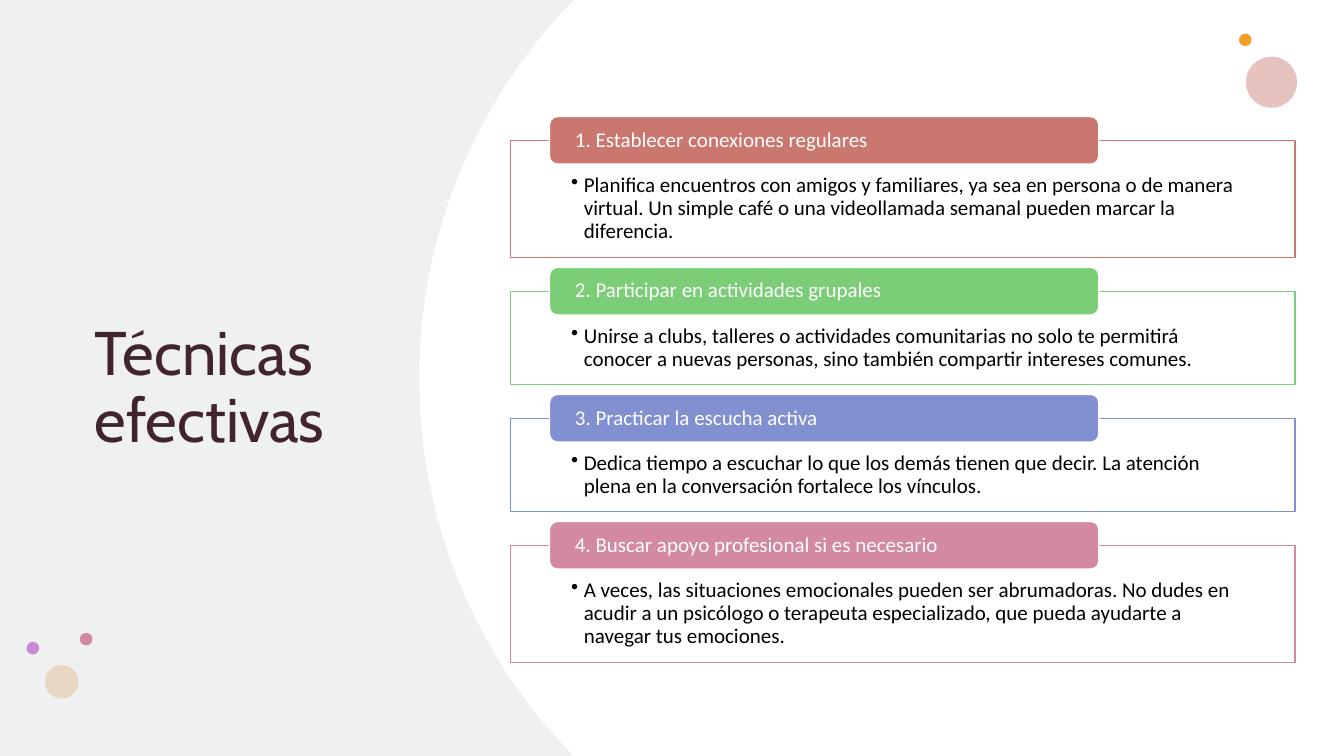
from lxml import etree
from pptx import Presentation
from pptx.dml.color import RGBColor
from pptx.enum.shapes import MSO_SHAPE
from pptx.enum.text import MSO_ANCHOR, PP_ALIGN
from pptx.oxml.ns import qn
from pptx.util import Pt

RECTANGLE, ROUNDED, OVAL = MSO_SHAPE.RECTANGLE, MSO_SHAPE.ROUNDED_RECTANGLE, MSO_SHAPE.OVAL
TOP, MIDDLE, LEFT = MSO_ANCHOR.TOP, MSO_ANCHOR.MIDDLE, PP_ALIGN.LEFT

PAGE_WIDTH, PAGE_HEIGHT = 960, 540
WHITE, BLACK, PLUM, PALE_GREY = "FFFFFF", "000000", "412430", "EFF0F2"

# Colour, frame height, heading, advice
TECHNIQUES = [
    ("CA776F", 83.75, "1. Establecer conexiones regulares",
     "Planifica encuentros con amigos y familiares, ya sea en persona o de manera virtual. "
     "Un simple café o una videollamada semanal pueden marcar la diferencia."),
    ("7CCD78", 66.75, "2. Participar en actividades grupales",
     "Unirse a clubs, talleres o actividades comunitarias no solo te permitirá conocer a "
     "nuevas personas, sino también compartir intereses comunes."),
    ("8090D0", 66.75, "3. Practicar la escucha activa",
     "Dedica tiempo a escuchar lo que los demás tienen que decir. "
     "La atención plena en la conversación fortalece los vínculos."),
    ("D389A2", 83.75, "4. Buscar apoyo profesional si es necesario",
     "A veces, las situaciones emocionales pueden ser abrumadoras. No dudes en acudir a un "
     "psicólogo o terapeuta especializado, que pueda ayudarte a navegar tus emociones."),
]


def color(hex_text):
    return RGBColor.from_string(hex_text)


def paint(shape, fill, line=None, opacity=100):
    shape.shadow.inherit = False
    shape.fill.solid()
    shape.fill.fore_color.rgb = color(fill)
    if opacity < 100:
        tint = shape.fill._xPr.find(".//" + qn("a:srgbClr"))
        etree.SubElement(tint, qn("a:alpha"), val=str(opacity * 1000))
    if line:
        shape.line.color.rgb = color(line)
        shape.line.width = Pt(1)
    else:
        shape.line.fill.background()


def add_box(page, kind, box, fill, line=None, opacity=100):
    shape = page.shapes.add_shape(kind, *[Pt(length) for length in box])
    paint(shape, fill, line, opacity)
    return shape


def write(shape, text, font, size, ink, anchor, insets):
    frame = shape.text_frame
    frame.word_wrap = True
    frame.vertical_anchor = anchor
    frame.margin_left, frame.margin_top, frame.margin_right, frame.margin_bottom = [
        Pt(inset) for inset in insets]
    para = frame.paragraphs[0]
    para.alignment = LEFT
    para.line_spacing = 0.9
    span = para.add_run()
    span.text = text
    span.font.name = font
    span.font.size = Pt(size)
    span.font.color.rgb = color(ink)
    return para


def add_bullet(para, indent):
    properties = para._p.get_or_add_pPr()
    properties.set("marL", str(Pt(indent)))
    properties.set("indent", str(-Pt(indent)))
    etree.SubElement(properties, qn("a:buChar"), char="•")


def bezier(start, first, second, end, steps=32):
    for step in range(1, steps + 1):
        t = step / steps
        weights = ((1 - t) ** 3, 3 * t * (1 - t) ** 2, 3 * t ** 2 * (1 - t), t ** 3)
        yield tuple(sum(weight * point[axis] for weight, point in
                        zip(weights, (start, first, second, end))) for axis in (0, 1))


def add_curved_panel(page, box):
    left, top, width, height = box
    upper, middle, lower = (101, 10), (0, 270), (88.5, 516)
    edge = [upper,
            *bezier(upper, (38, 79), (0, 170), middle),
            *bezier(middle, (0, 363.5), (33, 449), lower),
            (110, height), (width, height), (width, 0)]
    builder = page.shapes.build_freeform(Pt(left + 111), Pt(top), scale=1.0)
    builder.add_line_segments([(Pt(left + x), Pt(top + y)) for x, y in edge], close=True)
    paint(builder.convert_to_shape(), WHITE)


def add_dots(page, box, dots):
    left, top = box[:2]
    for x, y, diameter, fill, opacity in dots:
        add_box(page, OVAL, (left + x, top + y, diameter, diameter), fill, opacity=opacity)


def add_title(page, box):
    title = page.shapes.add_textbox(*[Pt(length) for length in box])
    write(title, "Técnicas efectivas", "Cabin", 44, PLUM, MIDDLE, (7.2, 3.6, 7.2, 3.6))


def add_technique(page, box, fill, heading, advice):
    left, top, width, height = box
    # Outlined frame with the advice
    frame = add_box(page, RECTANGLE, box, WHITE, fill)
    para = write(frame, advice, "Calibri", 15, BLACK, TOP, (43.5, 24.5, 43.5, 8.5))
    add_bullet(para, 9)
    # Heading tab centred on the frame's top edge
    tab = add_box(page, ROUNDED, (left + 28, top - 17, width * 0.7, 34), fill, WHITE)
    write(tab, heading, "Calibri", 15, WHITE, MIDDLE, (16.5, 0, 16.5, 0))


def add_techniques(page, box):
    left, top, width = box
    for fill, height, heading, advice in TECHNIQUES:
        add_technique(page, (left, top, width, height), fill, heading, advice)
        top += height + 24


def main():
    deck = Presentation()
    deck.slide_width, deck.slide_height = Pt(PAGE_WIDTH), Pt(PAGE_HEIGHT)
    page = deck.slides.add_slide(deck.slide_layouts[6])
    # Backdrop
    page.background.fill.solid()
    page.background.fill.fore_color.rgb = color(PALE_GREY)
    add_curved_panel(page, (299.5, 0, PAGE_WIDTH - 299.5, PAGE_HEIGHT))
    # Corner dots
    add_dots(page, (885, 24), [(5, 16.5, 36.5, "DFADA9", 72), (0, 0, 9, "F39E29", 100)])
    add_dots(page, (19, 452), [(38, 0, 9, "D389A2", 100), (13, 23, 24, "E9D7C4", 100),
                               (0, 6.5, 9, "C789D3", 100)])
    # Content
    add_title(page, (60.5, 75, 225.5, 406))
    add_techniques(page, (364.5, 100.25, 560.5))
    deck.save("out.pptx")


if __name__ == "__main__":
    main()
